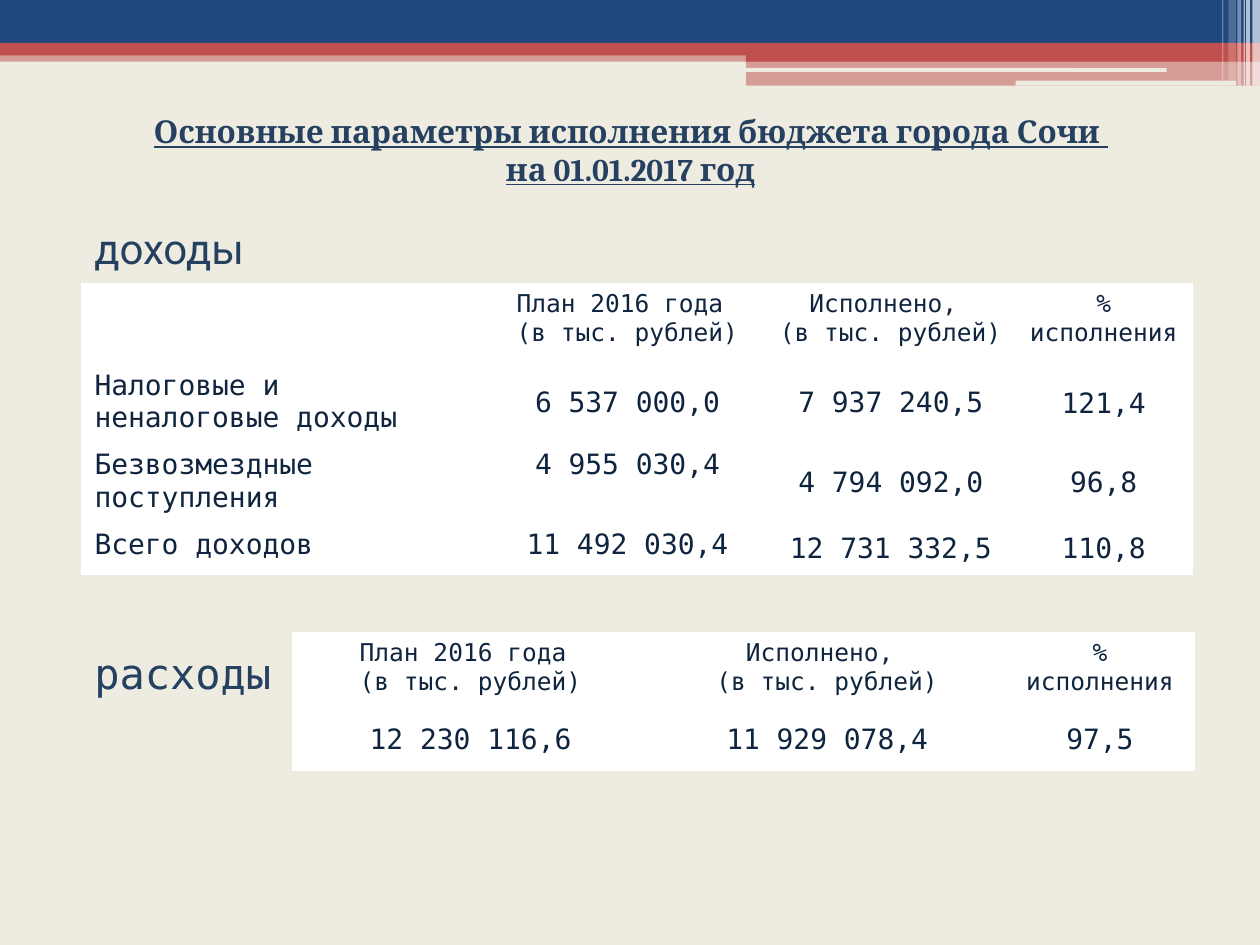
from lxml import etree
from pptx import Presentation
from pptx.dml.color import RGBColor
from pptx.enum.shapes import MSO_SHAPE
from pptx.enum.text import MSO_ANCHOR, PP_ALIGN
from pptx.oxml.ns import qn
from pptx.util import Inches, Pt

RECT, ROUND = MSO_SHAPE.RECTANGLE, MSO_SHAPE.ROUNDED_RECTANGLE
TOP, MIDDLE = MSO_ANCHOR.TOP, MSO_ANCHOR.MIDDLE
LEFT, CENTER = PP_ALIGN.LEFT, PP_ALIGN.CENTER
MONO = "DejaVu Sans Mono"
COLORS = {"paper": "EEECE1", "navy": "1F497D", "red": "C0504D",
          "white": "FFFFFF", "heading": "254061", "ink": "0F243E"}
PLAN = "План 2016 года \n(в тыс. рублей)"
DONE = "Исполнено, \n(в тыс. рублей)"
PERCENT = "% исполнения"


def rgb(name):
    return RGBColor.from_string(COLORS[name])


def write_text(tf, text, size=16, font=MONO, color="ink", align=LEFT,
               bold=False, underline=False):
    for i, line in enumerate(text.split("\n")):
        p = tf.paragraphs[0] if i == 0 else tf.add_paragraph()
        p.alignment = align
        r = p.add_run()
        r.text = line
        r.font.size = Pt(size)
        r.font.name = font
        r.font.color.rgb = rgb(color)
        r.font.bold = bold
        r.font.underline = underline


def add_label(s, box, text, **fmt):
    sp = s.shapes.add_textbox(*map(Inches, box))
    sp.text_frame.word_wrap = True
    write_text(sp.text_frame, text, **fmt)


def add_bar(s, box, color, alpha=100, shape=RECT):
    sp = s.shapes.add_shape(shape, *map(Inches, box))
    sp.shadow.inherit = False
    sp.fill.solid()
    sp.fill.fore_color.rgb = rgb(color)
    sp.line.fill.background()
    if alpha < 100:
        clr = sp.fill._xPr.find(qn("a:solidFill"))[0]
        etree.SubElement(clr, qn("a:alpha"), val=str(alpha * 1000))


def add_banner(s, left, top, width):
    right = left + width
    bars = [(0, 0.4, 10, 0.09, "red", 50), (0, 0, 10, 0.34, "navy", 100),
            (0, 0.34, 10, 0.1, "red", 100), (5.92, 0.39, 4.08, 0.1, "red", 100),
            (5.92, 0.48, 4.08, 0.2, "red", 50)]
    for x, y, w, h, color, alpha in bars:
        add_bar(s, (left + x, top + y, w, h), color, alpha)
    for x, y, w, h in [(5.91, 0.54, 3.35, 0.03), (8.06, 0.64, 1.75, 0.04)]:
        add_bar(s, (left + x, top + y, w, h), "paper", shape=ROUND)
    stripes = [(0.06, 0.06, 0.68, 65), (0.11, 0.03, 0.68, 65),
               (0.13, 0.01, 0.68, 60), (0.18, 0.03, 0.68, 40),
               (0.25, 0.06, 0.64, 20), (0.3, 0.01, 0.64, 30)]
    for offset, w, h, alpha in stripes:
        add_bar(s, (right - offset, top, w, h), "white", alpha)


def set_borders(cell, bottom):
    tcPr = cell._tc.get_or_add_tcPr()
    widths = {"a:lnL": 1, "a:lnR": 1, "a:lnT": 1, "a:lnB": bottom}
    for i, (tag, width) in enumerate(widths.items()):
        ln = etree.Element(qn(tag), w=str(Pt(width)))
        fill = etree.SubElement(ln, qn("a:solidFill"))
        etree.SubElement(fill, qn("a:srgbClr"), val=COLORS["white"])
        tcPr.insert(i, ln)


def add_budget_table(s, box, cols, heights, rows, labelled=False,
                     top_cells=(), tight_cells=()):
    table = s.shapes.add_table(len(rows), len(cols), *map(Inches, box)).table
    table.first_row = table.horz_banding = False
    for col, width in zip(table.columns, cols):
        col.width = Inches(width)
    for i, (row, height) in enumerate(zip(rows, heights)):
        table.rows[i].height = Inches(height)
        for j, text in enumerate(row):
            cell = table.cell(i, j)
            is_label = labelled and j == 0
            cell.fill.solid()
            cell.fill.fore_color.rgb = rgb("white")
            set_borders(cell, 3 if i == 0 else 1)
            at_top = i == 0 or is_label or (i, j) in top_cells
            cell.vertical_anchor = TOP if at_top else MIDDLE
            if (i, j) in tight_cells:
                cell.margin_left = cell.margin_top = cell.margin_right = Inches(0.01)
                cell.margin_bottom = 0
            if text:
                write_text(cell.text_frame, text, size=14 if i == 0 else 16,
                           align=LEFT if is_label else CENTER)


def add_income(s, left, top):
    add_label(s, (left, top, 2.2, 0.5), "доходы", size=24, font="Roboto",
              color="heading")
    rows = [("", PLAN, DONE, PERCENT),
            ("Налоговые и неналоговые доходы", "6 537 000,0", "7 937 240,5", "121,4"),
            ("Безвозмездные поступления", "4 955 030,4", "4 794 092,0", "96,8"),
            ("Всего доходов", "11 492 030,4", "12 731 332,5", "110,8")]
    add_budget_table(s, (left, top + 0.53, 8.82, 2.07), [3.23, 2.2, 1.98, 1.4],
                     [0.63] + [0.41] * 3, rows, labelled=True,
                     top_cells=[(2, 1), (3, 1)],
                     tight_cells=[(i, 3) for i in range(1, 4)])


def add_expenses(s, left, top):
    add_label(s, (left, top + 0.07, 2.2, 0.5), "расходы", size=24,
              color="heading")
    rows = [(PLAN, DONE, PERCENT), ("12 230 116,6", "11 929 078,4", "97,5")]
    add_budget_table(s, (left + 1.67, top, 7.17, 1.09), [2.83, 2.83, 1.5],
                     [0.62, 0.47], rows)


def main():
    prs = Presentation()
    prs.slide_width, prs.slide_height = Inches(10), Inches(7.5)
    s = prs.slides.add_slide(prs.slide_layouts[6])
    s.background.fill.solid()
    s.background.fill.fore_color.rgb = rgb("paper")
    add_banner(s, 0, 0, 10)
    add_income(s, 0.65, 1.72)
    add_expenses(s, 0.65, 5.02)
    add_label(s, (0.24, 0.84, 9.53, 0.71),
              "Основные параметры исполнения бюджета города Сочи \nна 01.01.2017 год",
              size=18, font="Cambria", color="heading", align=CENTER,
              bold=True, underline=True)
    prs.save("out.pptx")


if __name__ == "__main__":
    main()
